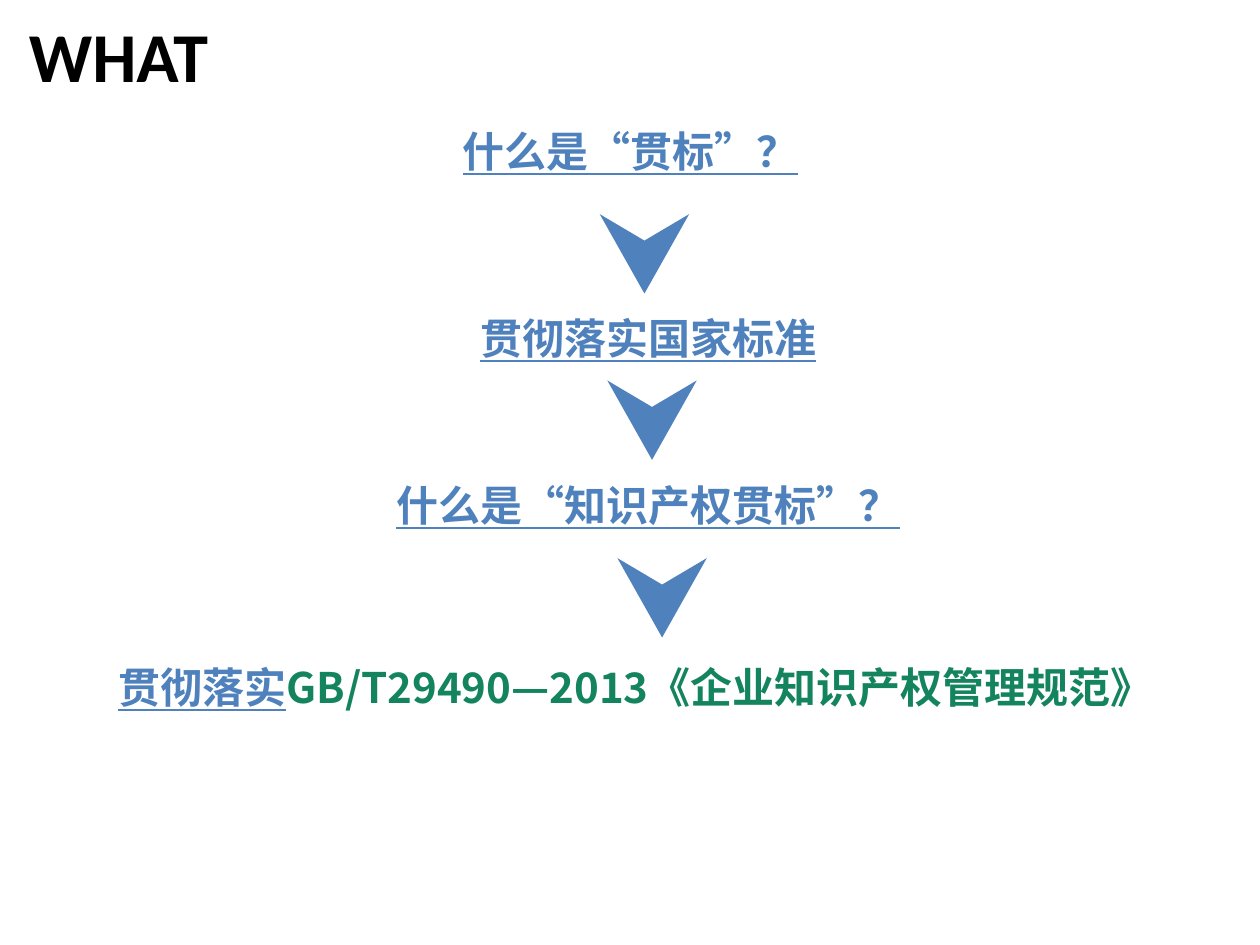
from lxml import etree
from pptx import Presentation
from pptx.dml.color import RGBColor as Rgb
from pptx.enum.lang import MSO_LANGUAGE_ID as Lang
from pptx.enum.text import MSO_ANCHOR as Anchor, PP_ALIGN as Align
from pptx.oxml.ns import qn
from pptx.util import Inches, Pt

COLORS = {"blue": "4F81BD", "green": "14845E", "black": "000000", "white": "FFFFFF"}
CJK = "Noto Sans CJK SC"

# left, top, width, then runs of (text, colour, underlined)
STEPS = [
    (0.91, 0.95, 8.19, [("什么是“贯标”？", "blue", True)]),
    (1.05, 2.43, 8.19, [("贯彻落实国家标准", "blue", True)]),
    (1.05, 3.76, 8.19, [("什么是“知识产权贯标”？", "blue", True)]),
    (0.43, 5.2, 9.23, [("贯彻落实", "blue", True),
                       ("GB/T29490—2013《企业知识产权管理规范》", "green", False)]),
]
STEP_H = 0.53
ARROWS = [(4.76, 1.7), (4.82, 3.02), (4.9, 4.43)]
ARROW_W, ARROW_H, NOTCH = 0.71, 0.63, 0.21


def style(run, size, color, face):
    font = run.font
    font.size, font.bold, font.name = Pt(size), True, face
    font.color.rgb = Rgb.from_string(COLORS[color])


def add_step(slide, left, top, width, parts):
    box = slide.shapes.add_textbox(*map(Inches, (left, top, width, STEP_H)))
    box.text_frame.word_wrap = True
    para = box.text_frame.paragraphs[0]
    para.alignment = Align.CENTER
    for text, color, lined in parts:
        run = para.add_run()
        run.text = text
        style(run, 24, color, CJK)
        run.font.underline = lined
        run.font.language_id = Lang.SIMPLIFIED_CHINESE
        latin = run.font._element.find(qn("a:latin"))
        east = etree.Element(qn("a:ea"), typeface=CJK)
        latin.addnext(east)


def add_arrow(slide, left, top):
    mid = left + ARROW_W / 2
    points = [(left, top), (mid, top + NOTCH), (left + ARROW_W, top)]
    path = slide.shapes.build_freeform(
        Inches(mid), Inches(top + ARROW_H))
    path.add_line_segments([(Inches(x), Inches(y)) for x, y in points], close=True)
    arrow = path.convert_to_shape()
    arrow.shadow.inherit = False
    arrow.fill.solid()
    arrow.fill.fore_color.rgb = Rgb.from_string(COLORS["blue"])
    arrow.line.fill.background()


def set_title(title):
    title.left, title.top, title.width, title.height = map(
        Inches, (0.13, 0.05, 1.8, 0.77))
    frame = title.text_frame
    frame.text = "WHAT"
    frame.word_wrap = False
    frame.vertical_anchor = Anchor.TOP
    para = frame.paragraphs[0]
    para.alignment = Align.LEFT
    run = para.runs[0]
    style(run, 40, "black", "Calibri")
    edge = etree.Element(qn("a:ln"), w=str(Pt(0.75)))
    fill = etree.SubElement(edge, qn("a:solidFill"))
    etree.SubElement(fill, qn("a:srgbClr"), val=COLORS["white"])
    run.font._element.insert(0, edge)


def main():
    deck = Presentation()
    deck.slide_width, deck.slide_height = Inches(10), Inches(7.5)
    slide = deck.slides.add_slide(deck.slide_layouts[5])
    set_title(slide.shapes.title)
    for step in STEPS:
        add_step(slide, *step)
    for spot in ARROWS:
        add_arrow(slide, *spot)
    deck.save("out.pptx")


if __name__ == "__main__":
    main()
